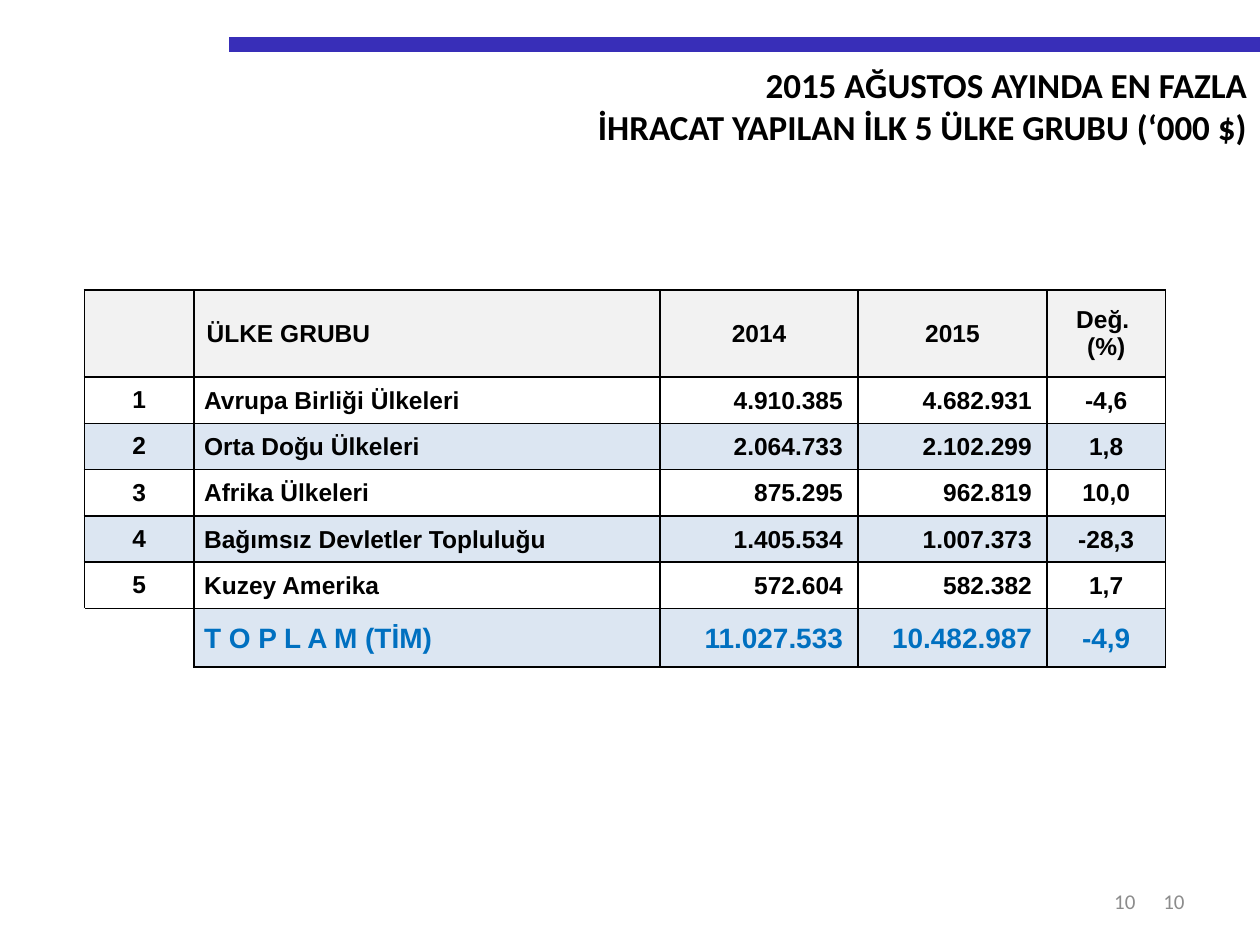
from dataclasses import dataclass

from lxml import etree
from pptx import Presentation
from pptx.dml.color import RGBColor
from pptx.enum.shapes import MSO_CONNECTOR
from pptx.enum.text import MSO_ANCHOR, PP_ALIGN
from pptx.oxml import parse_xml
from pptx.oxml.ns import nsdecls, qn
from pptx.util import Inches, Pt


@dataclass
class Theme:
    ink: str = "000000"
    accent: str = "382EB8"
    total: str = "0070C0"
    muted: str = "8C8C8C"
    header: str = "F2F2F2"
    band: str = "DCE6F2"
    heading_font: str = "Calibri"
    table_font: str = "Arial"
    title_size: int = 20
    total_size: int = 16
    table_size: int = 14
    number_size: int = 12


def write_text(frame, text, font, size, color, align=PP_ALIGN.LEFT, bold=True):
    frame.text = text
    for paragraph in frame.paragraphs:
        paragraph.alignment = align
        paragraph.font.name = font
        paragraph.font.size = Pt(size)
        paragraph.font.bold = bold
        paragraph.font.color.rgb = RGBColor.from_string(color)


def add_borders(cell, sides):
    for side in sides:
        cell._tc.get_or_add_tcPr().append(parse_xml(
            f'<a:ln{side} {nsdecls("a")} w="12700"><a:solidFill>'
            f'<a:srgbClr val="{theme.ink}"/></a:solidFill></a:ln{side}>'))


theme = Theme()
deck = Presentation()
deck.slide_width, deck.slide_height = Inches(10), Inches(7.5)
width, height = deck.slide_width, deck.slide_height
slide = deck.slides.add_slide(deck.slide_layouts[5])

rule_y = int(height * 0.047)
rule = slide.shapes.add_connector(
    MSO_CONNECTOR.STRAIGHT, int(width * 0.182), rule_y, width, rule_y)
rule.line.color.rgb = RGBColor.from_string(theme.accent)
rule.line.width = Pt(8.5)
etree.SubElement(rule._element.spPr, qn("a:effectLst"))

heading = slide.shapes.title
heading.left, heading.top = int(width * 0.106), int(height * 0.06)
heading.width, heading.height = int(width * 0.894), int(height * 0.103)
heading.text_frame.vertical_anchor = MSO_ANCHOR.TOP
write_text(heading.text_frame,
           "2015 AĞUSTOS AYINDA EN FAZLA\nİHRACAT YAPILAN İLK 5 ÜLKE GRUBU (‘000 $)",
           font=theme.heading_font, size=theme.title_size, color=theme.ink,
           align=PP_ALIGN.RIGHT)

for right_edge in (0.95, 0.911):
    page_number = slide.shapes.add_textbox(
        int(width * (right_edge - 0.21)), int(height * 0.927),
        int(width * 0.21), int(height * 0.053)).text_frame
    page_number.word_wrap = True
    page_number.vertical_anchor = MSO_ANCHOR.MIDDLE
    write_text(page_number, "10", font=theme.heading_font, size=theme.number_size,
               color=theme.muted, align=PP_ALIGN.RIGHT, bold=False)

exports = [
    ("", "ÜLKE GRUBU", "2014", "2015", "Değ. \n(%)"),
    ("1", "Avrupa Birliği Ülkeleri", "4.910.385", "4.682.931", "-4,6"),
    ("2", "Orta Doğu Ülkeleri", "2.064.733", "2.102.299", "1,8"),
    ("3", "Afrika Ülkeleri", "875.295", "962.819", "10,0"),
    ("4", "Bağımsız Devletler Topluluğu", "1.405.534", "1.007.373", "-28,3"),
    ("5", "Kuzey Amerika", "572.604", "582.382", "1,7"),
    ("", "T O P L A M (TİM)", "11.027.533", "10.482.987", "-4,9"),
]
column_shares = [0.087, 0.37, 0.157, 0.15, 0.094]
row_shares = [0.092] + [0.049] * 5 + [0.062]
aligns = [PP_ALIGN.CENTER, PP_ALIGN.LEFT, PP_ALIGN.RIGHT, PP_ALIGN.RIGHT, PP_ALIGN.CENTER]
side_margins = [(0.1, 0.1), (0.08, 0.01), (0.01, 0.12), (0.01, 0.12), (0.01, 0.01)]
last = len(exports) - 1

table = slide.shapes.add_table(
    len(exports), len(column_shares), int(width * 0.067), int(height * 0.307),
    int(width * sum(column_shares)), int(height * sum(row_shares))).table
table.first_row = table.horz_banding = False
for column, share in zip(table.columns, column_shares):
    column.width = int(width * share)
for row, share in zip(table.rows, row_shares):
    row.height = int(height * share)

for r, record in enumerate(exports):
    for c, entry in enumerate(record):
        cell = table.cell(r, c)
        corner = r == last and c == 0
        add_borders(cell, "RT" if corner else "LRTB")
        if corner or r in (1, 3, 5):
            cell.fill.background()
        else:
            cell.fill.solid()
            cell.fill.fore_color.rgb = RGBColor.from_string(
                theme.band if r else theme.header)
        cell.vertical_anchor = MSO_ANCHOR.MIDDLE
        if r and c:
            cell.margin_left, cell.margin_right = map(Inches, side_margins[c])
            cell.margin_top, cell.margin_bottom = Inches(0.01), 0
        write_text(cell.text_frame, entry, font=theme.table_font,
                   size=theme.total_size if r == last else theme.table_size,
                   color=theme.total if r == last else theme.ink,
                   align=PP_ALIGN.CENTER if r == 0 and c != 1 else aligns[c])

deck.save("out.pptx")
